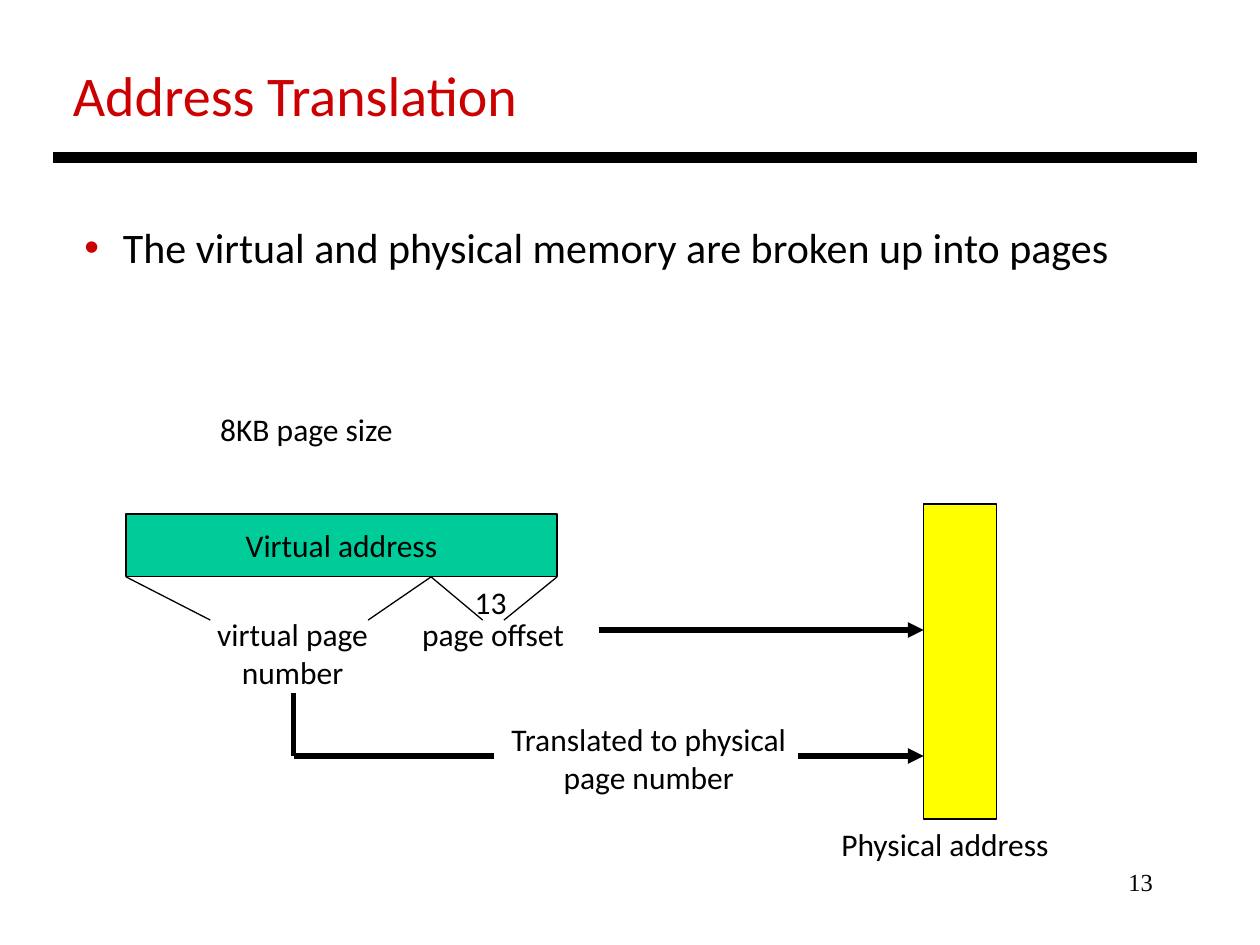
"""Build a slide on translating virtual addresses to physical addresses."""
from lxml import etree
from pptx import Presentation
from pptx.dml.color import RGBColor
from pptx.enum import shapes, text
from pptx.oxml import ns
from pptx.util import Cm, Pt

BLACK = RGBColor(0x00, 0x00, 0x00)
RED = RGBColor(0xCC, 0x00, 0x00)
GREEN = RGBColor(0x00, 0xCC, 0x99)
YELLOW = RGBColor(0xFF, 0xFF, 0x00)
LEFT, CENTER, RIGHT = text.PP_ALIGN.LEFT, text.PP_ALIGN.CENTER, text.PP_ALIGN.RIGHT

TITLE = ("Address Translation", (1.22, 1.09, 9.58, 1.63))
BULLET = ("The virtual and physical memory are broken up into pages", (1.45, 4.34, 21.18, 1.27))
PAGE_NUMBER = ("13", (18.21, 17.35, 5.28, 1.27))
LABELS = [
    ("8KB page size", (4.19, 8.15, 4.04, 1.02), LEFT),
    ("page offset", (8.26, 12.27, 3.43, 1.02), LEFT),
    ("virtual page\nnumber", (4.11, 12.27, 3.58, 1.8), CENTER),
    ("Translated to physical\npage number", (10.03, 14.4, 6.1, 1.8), CENTER),
    ("Physical address", (16.71, 16.51, 4.72, 1.02), LEFT),
    ("13", (9.32, 11.63, 1.17, 1.02), LEFT),
]
VIRTUAL = (2.54, 10.36, 8.69, 1.27)
PHYSICAL = (18.62, 10.16, 1.47, 6.35)
SPLIT_X = 8.69
FIELD_Y = 12.5
NUMBER_X = 5.92
OFFSET_Y, TRANSLATED_Y = 12.7, 15.24

virtual_left, virtual_bottom = VIRTUAL[0], VIRTUAL[1] + VIRTUAL[3]
virtual_right = VIRTUAL[0] + VIRTUAL[2]
FIELD_EDGES = [(SPLIT_X, 9.73), (virtual_right, 10.16), (virtual_left, 4.24), (SPLIT_X, 7.42)]
FLOWS = [
    ((NUMBER_X, 13.97), (NUMBER_X, TRANSLATED_Y), False),
    ((NUMBER_X, TRANSLATED_Y), (9.96, TRANSLATED_Y), False),
    ((16.08, TRANSLATED_Y), (PHYSICAL[0], TRANSLATED_Y), True),
    ((12.07, OFFSET_Y), (PHYSICAL[0], OFFSET_Y), True),
]


def write(frame, words, size=18, color=BLACK, align=LEFT, font="Calibri", wrap=False):
    frame.word_wrap = wrap
    frame.text = words
    for paragraph in frame.paragraphs:
        paragraph.alignment = align
        paragraph.font.name = font
        paragraph.font.size = Pt(size)
        paragraph.font.color.rgb = color


def add_text(slide, words, box, **style):
    frame = slide.shapes.add_textbox(*map(Cm, box)).text_frame
    write(frame, words, **style)
    return frame


def add_bullet(paragraph, color):
    properties = paragraph._p.get_or_add_pPr()
    properties.set("marL", str(Cm(0.78)))
    properties.set("indent", str(-Cm(0.78)))
    bullet_color = etree.SubElement(properties, ns.qn("a:buClr"))
    etree.SubElement(bullet_color, ns.qn("a:srgbClr"), val=str(color))
    etree.SubElement(properties, ns.qn("a:buFont"), typeface="Arial")
    etree.SubElement(properties, ns.qn("a:buChar"), char="•")


def add_block(slide, box, fill):
    block = slide.shapes.add_shape(shapes.MSO_SHAPE.RECTANGLE, *map(Cm, box))
    block.shadow.inherit = False
    block.fill.solid()
    block.fill.fore_color.rgb = fill
    block.line.color.rgb = BLACK
    block.line.width = Pt(0.75)
    return block


def add_line(slide, start, end, width, arrow=False):
    line = slide.shapes.add_connector(shapes.MSO_CONNECTOR.STRAIGHT, *map(Cm, start + end))
    line.line.color.rgb = BLACK
    line.line.width = Pt(width)
    if arrow:
        etree.SubElement(line.line._get_or_add_ln(), ns.qn("a:tailEnd"), type="triangle")
    etree.SubElement(line._element.spPr, ns.qn("a:effectLst"))


def main():
    deck = Presentation()
    deck.slide_width, deck.slide_height = Cm(25.4), Cm(19.05)
    slide = deck.slides.add_slide(deck.slide_layouts[6])

    add_text(slide, *PAGE_NUMBER, size=14, align=RIGHT, font="Times New Roman", wrap=True)
    add_text(slide, *TITLE, size=32, color=RED)
    add_line(slide, (1.07, 3.18), (24.13, 3.18), 6)
    add_bullet(add_text(slide, *BULLET, size=24).paragraphs[0], RED)

    virtual = add_block(slide, VIRTUAL, GREEN)
    write(virtual.text_frame, "Virtual address", align=CENTER)
    virtual.text_frame.vertical_anchor = text.MSO_ANCHOR.MIDDLE
    add_block(slide, PHYSICAL, YELLOW)

    for top_x, bottom_x in FIELD_EDGES:
        add_line(slide, (top_x, virtual_bottom), (bottom_x, FIELD_Y), 0.75)
    for start, end, arrow in FLOWS:
        add_line(slide, start, end, 3, arrow)
    for words, box, align in LABELS:
        add_text(slide, words, box, align=align)

    deck.save("out.pptx")


if __name__ == "__main__":
    main()
